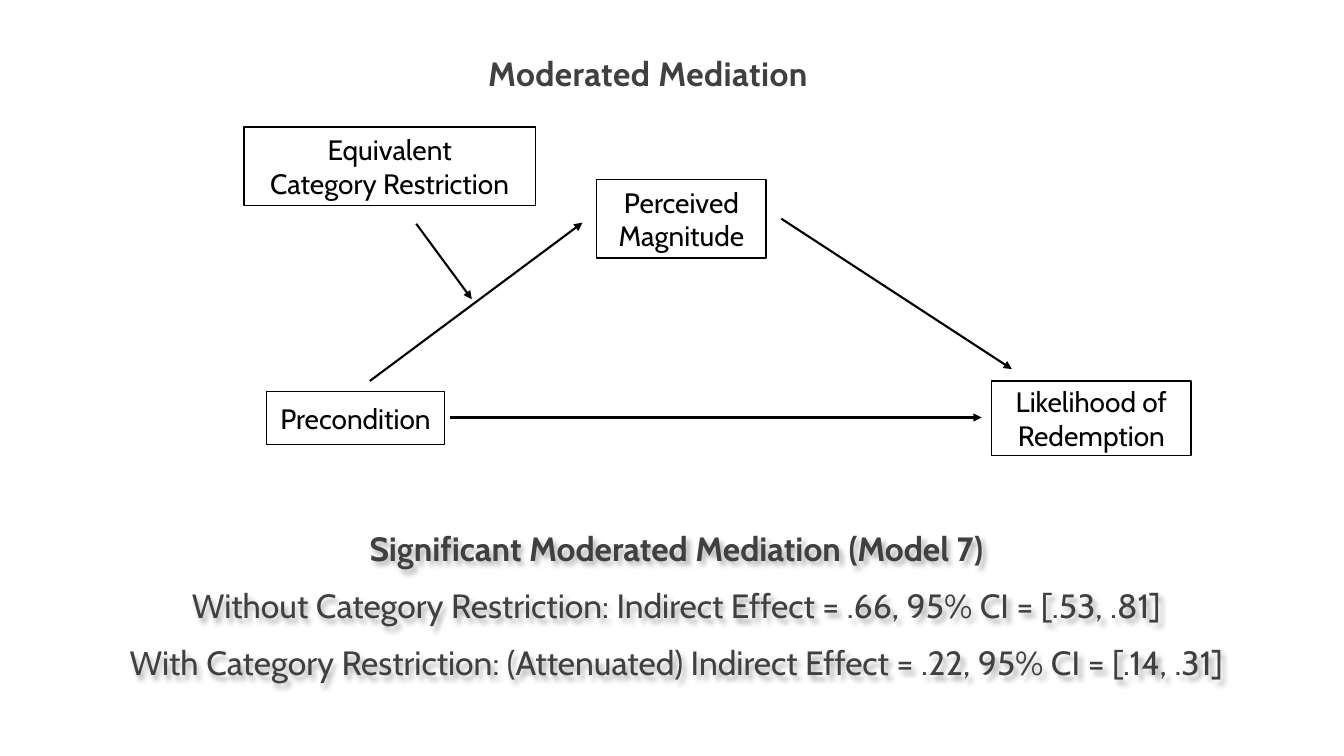
from lxml.etree import SubElement
from pptx import Presentation
from pptx.dml.color import RGBColor
from pptx.enum.shapes import MSO_CONNECTOR as Connector, MSO_SHAPE as Shape
from pptx.enum.text import MSO_ANCHOR as Anchor, PP_ALIGN as Align
from pptx.oxml.ns import qn
from pptx.util import Cm, Pt

BLACK = RGBColor(0x00, 0x00, 0x00)
GREY = RGBColor(0x40, 0x40, 0x40)
FONT = "Cabin"

VARIABLES = [
    ("Precondition", 0.56, 6.66, 4.5, 1.35),
    ("Likelihood of Redemption", 18.84, 6.4, 5.03, 1.88),
    ("Equivalent\nCategory Restriction", 0, 0, 7.34, 1.98),
    ("Perceived Magnitude", 8.89, 1.32, 4.27, 1.98),
]
EFFECTS = [
    (5.2, 7.32, 18.59, 7.32),
    (4.34, 2.44, 5.74, 4.34),
    (3.17, 6.4, 8.53, 2.41),
    (13.54, 2.31, 19.35, 6.1),
]
FINDINGS = [
    "Significant Moderated Mediation (Model 7)",
    "Without Category Restriction: Indirect Effect = .66, 95% CI = [.53, .81]",
    "With Category Restriction: (Attenuated) Indirect Effect = .22, 95% CI = [.14, .31]",
]


def format_runs(paragraph, size, color, bold=False):
    for run in paragraph.runs:
        run.font.name = FONT
        run.font.size = Pt(size)
        run.font.bold = bold
        run.font.color.rgb = color


def add_variable(slide, label, left, top, width, height):
    variable = slide.shapes.add_shape(
        Shape.RECTANGLE, Cm(left), Cm(top), Cm(width), Cm(height))
    variable.shadow.inherit = False
    variable.fill.background()
    variable.line.color.rgb = BLACK
    variable.line.width = Pt(1)
    frame = variable.text_frame
    frame.word_wrap = True
    frame.vertical_anchor = Anchor.MIDDLE
    frame.text = label
    for paragraph in frame.paragraphs:
        paragraph.alignment = Align.CENTER
        format_runs(paragraph, 20, BLACK)


def add_effect(slide, start_x, start_y, end_x, end_y):
    effect = slide.shapes.add_connector(
        Connector.STRAIGHT, Cm(start_x), Cm(start_y), Cm(end_x), Cm(end_y))
    effect.line.color.rgb = BLACK
    effect.line.width = Pt(1.5)
    SubElement(effect.line._get_or_add_ln(), qn("a:tailEnd"), type="triangle")
    SubElement(effect._element.spPr, qn("a:effectLst"))


def add_title(slide, left, top, width, height):
    title = slide.shapes.add_textbox(Cm(left), Cm(top), Cm(width), Cm(height))
    frame = title.text_frame
    frame.word_wrap = True
    frame.margin_left = frame.margin_right = frame.margin_bottom = 0
    frame.margin_top = Cm(0.1)
    frame.text = "Moderated Mediation"
    paragraph = frame.paragraphs[0]
    paragraph.space_before = Pt(2.6)
    paragraph._p.get_or_add_pPr().set("marL", str(Cm(0.18)))
    format_runs(paragraph, 24, GREY, bold=True)
    paragraph.runs[0].font._element.set("spc", "30")


def add_model(slide, left, top):
    for label, x, y, width, height in VARIABLES:
        add_variable(slide, label, left + x, top + y, width, height)
    for start_x, start_y, end_x, end_y in EFFECTS:
        add_effect(slide, left + start_x, top + start_y, left + end_x, top + end_y)


def add_soft_shadow(shape):
    effects = SubElement(shape._element.spPr, qn("a:effectLst"))
    shadow = SubElement(effects, qn("a:outerShdw"), blurRad=str(Pt(4)),
                        dist=str(Pt(3)), dir="2700000", algn="tl")
    color = SubElement(shadow, qn("a:srgbClr"), val=str(BLACK))
    SubElement(color, qn("a:alpha"), val="30000")


def add_findings(slide, left, top, width, height):
    findings = slide.shapes.add_textbox(Cm(left), Cm(top), Cm(width), Cm(height))
    add_soft_shadow(findings)
    frame = findings.text_frame
    frame.word_wrap = True
    frame.vertical_anchor = Anchor.MIDDLE
    frame.text = "\n".join(FINDINGS)
    for index, paragraph in enumerate(frame.paragraphs):
        paragraph.alignment = Align.CENTER
        paragraph.space_after = Pt(12)
        format_runs(paragraph, 24, GREY, bold=index == 0)


def main():
    deck = Presentation()
    deck.slide_width = Cm(33.87)
    deck.slide_height = Cm(19.05)
    slide = deck.slides.add_slide(deck.slide_layouts[6])
    add_model(slide, 6.15, 3.2)
    add_title(slide, 12.12, 1.24, 11.71, 1.96)
    add_findings(slide, 1.27, 13.16, 31.55, 4.19)
    deck.save("out.pptx")


if __name__ == "__main__":
    main()
